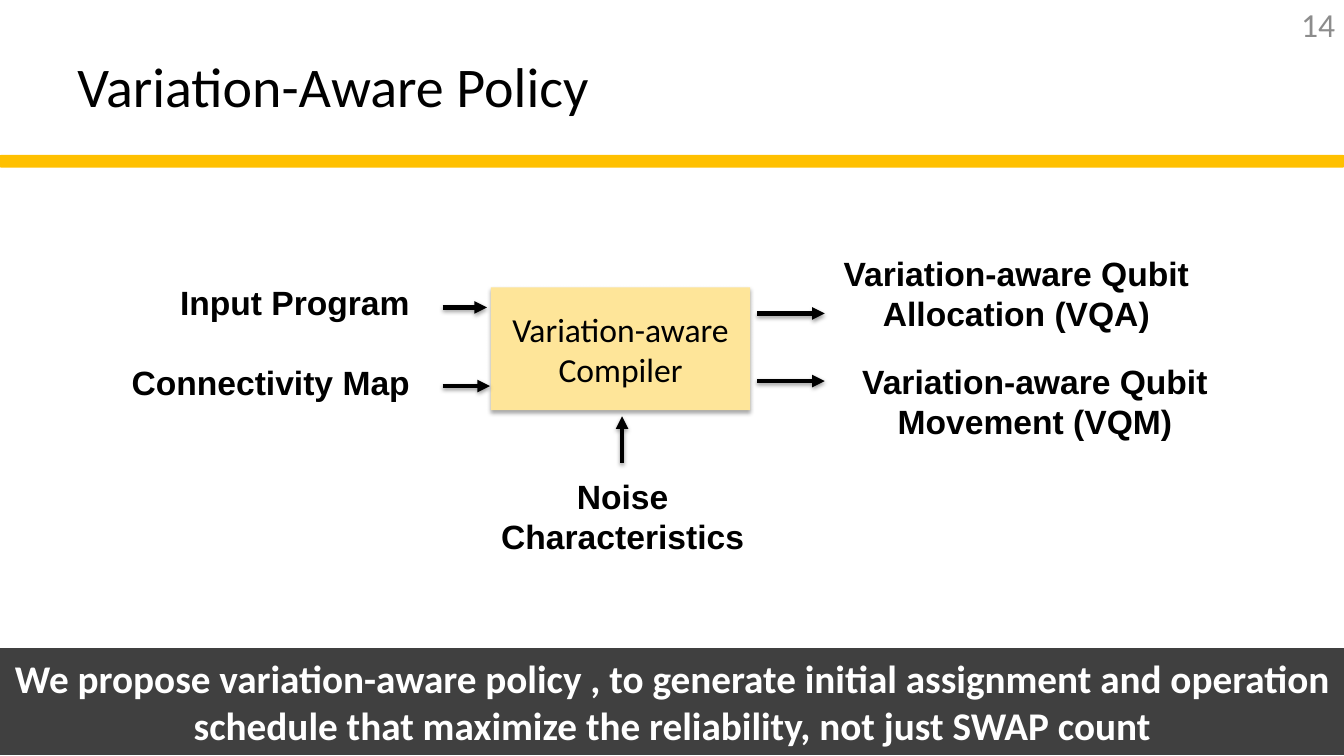
from dataclasses import dataclass

from lxml import etree
from pptx import Presentation
from pptx import util as u
from pptx.dml.color import RGBColor
from pptx.enum import shapes, text
from pptx.oxml import ns

PX = 9144


@dataclass(frozen=True)
class Theme:
    black: str = "000000"
    white: str = "FFFFFF"
    grey: str = "8C8C8C"
    dark: str = "404040"
    gold: str = "FFC000"
    cream: str = "FEE599"
    body_font: str = "Calibri"
    label_font: str = "Arial"
    title_size: int = 40
    banner_size: int = 28
    text_size: int = 24
    arrow_width: int = 3


THEME = Theme()


def lengths(*values):
    return [u.Emu(value * PX) for value in values]


def write(shape, content, size, color, font=THEME.body_font, bold=False,
          align=text.PP_ALIGN.CENTER, anchor=text.MSO_ANCHOR.MIDDLE):
    frame = shape.text_frame
    frame.word_wrap = True
    frame.vertical_anchor = anchor
    frame.text = content
    for paragraph in frame.paragraphs:
        paragraph.alignment = align
        for run in paragraph.runs:
            run.font.name = font
            run.font.size = u.Pt(size)
            run.font.bold = bold
            run.font.color.rgb = RGBColor.from_string(color)


def add_shadow(shape, opacity, distance):
    properties = shape._element.spPr
    for effects in properties.findall(ns.qn("a:effectLst")):
        properties.remove(effects)
    effects = etree.SubElement(properties, ns.qn("a:effectLst"))
    shadow = etree.SubElement(
        effects, ns.qn("a:outerShdw"), blurRad=str(u.Pt(3.1)),
        dist=str(u.Pt(distance)), dir="5400000", rotWithShape="0")
    color = etree.SubElement(shadow, ns.qn("a:srgbClr"), val=THEME.black)
    etree.SubElement(color, ns.qn("a:alpha"), val=str(opacity * 1000))


def add_text(slide, box, content, size, color, **style):
    shape = slide.shapes.add_textbox(*lengths(*box))
    write(shape, content, size, color, **style)


def add_label(slide, box, content):
    add_text(slide, box, content, THEME.text_size, THEME.black,
             font=THEME.label_font, bold=True, anchor=text.MSO_ANCHOR.TOP)


def add_block(slide, kind, box, fill):
    shape = slide.shapes.add_shape(kind, *lengths(*box))
    shape.shadow.inherit = False
    shape.fill.solid()
    shape.fill.fore_color.rgb = RGBColor.from_string(fill)
    shape.line.fill.background()
    return shape


def add_arrow(slide, *ends):
    arrow = slide.shapes.add_connector(
        shapes.MSO_CONNECTOR.STRAIGHT, *lengths(*ends))
    arrow.line.width = u.Pt(THEME.arrow_width)
    arrow.line.color.rgb = RGBColor.from_string(THEME.black)
    etree.SubElement(arrow.line._get_or_add_ln(), ns.qn("a:tailEnd"), type="triangle")
    add_shadow(arrow, 38, 1.6)


def add_header(slide):
    rule = add_block(slide, shapes.MSO_SHAPE.ROUNDED_RECTANGLE,
                     (0, 155, 1333, 10), THEME.gold)
    rule.line.color.rgb = RGBColor.from_string(THEME.gold)
    rule.line.width = u.Pt(2)
    add_text(slide, (67, 22, 889, 125), "Variation-Aware Policy",
             THEME.title_size, THEME.black, align=text.PP_ALIGN.LEFT)
    add_text(slide, (1263, 0, 71, 48), "14", THEME.text_size, THEME.grey,
             align=text.PP_ALIGN.RIGHT)


def add_diagram(slide):
    compiler = add_block(slide, shapes.MSO_SHAPE.RECTANGLE,
                         (487, 285, 257, 122), THEME.cream)
    write(compiler, "Variation-aware\nCompiler", THEME.text_size, THEME.black)
    add_shadow(compiler, 35, 1.8)

    for box, content in (
        ((131, 275, 323, 50), "Input Program"),
        ((83, 354, 371, 50), "Connectivity Map"),
        ((744, 246, 528, 91), "Variation-aware Qubit Allocation (VQA)"),
        ((790, 353, 473, 91), "Variation-aware Qubit Movement (VQM)"),
        ((475, 467, 285, 91), "Noise Characteristics"),
    ):
        add_label(slide, box, content)

    for ends in (
        (439, 305, 483, 305),
        (439, 383, 486, 383),
        (751, 311, 818, 311),
        (751, 378, 818, 378),
        (617, 459, 617, 413),
    ):
        add_arrow(slide, *ends)


def add_banner(slide):
    banner = add_block(slide, shapes.MSO_SHAPE.ROUNDED_RECTANGLE,
                       (0, 643, 1333, 106), THEME.dark)
    banner.adjustments[0] = 0
    write(banner,
          "We propose variation-aware policy , to generate initial assignment "
          "and operation schedule that maximize the reliability, "
          "not just SWAP count",
          THEME.banner_size, THEME.white, bold=True)


def main():
    presentation = Presentation()
    presentation.slide_width, presentation.slide_height = lengths(1333, 750)
    slide = presentation.slides.add_slide(presentation.slide_layouts[6])
    add_header(slide)
    add_diagram(slide)
    add_banner(slide)
    presentation.save("out.pptx")


if __name__ == "__main__":
    main()
